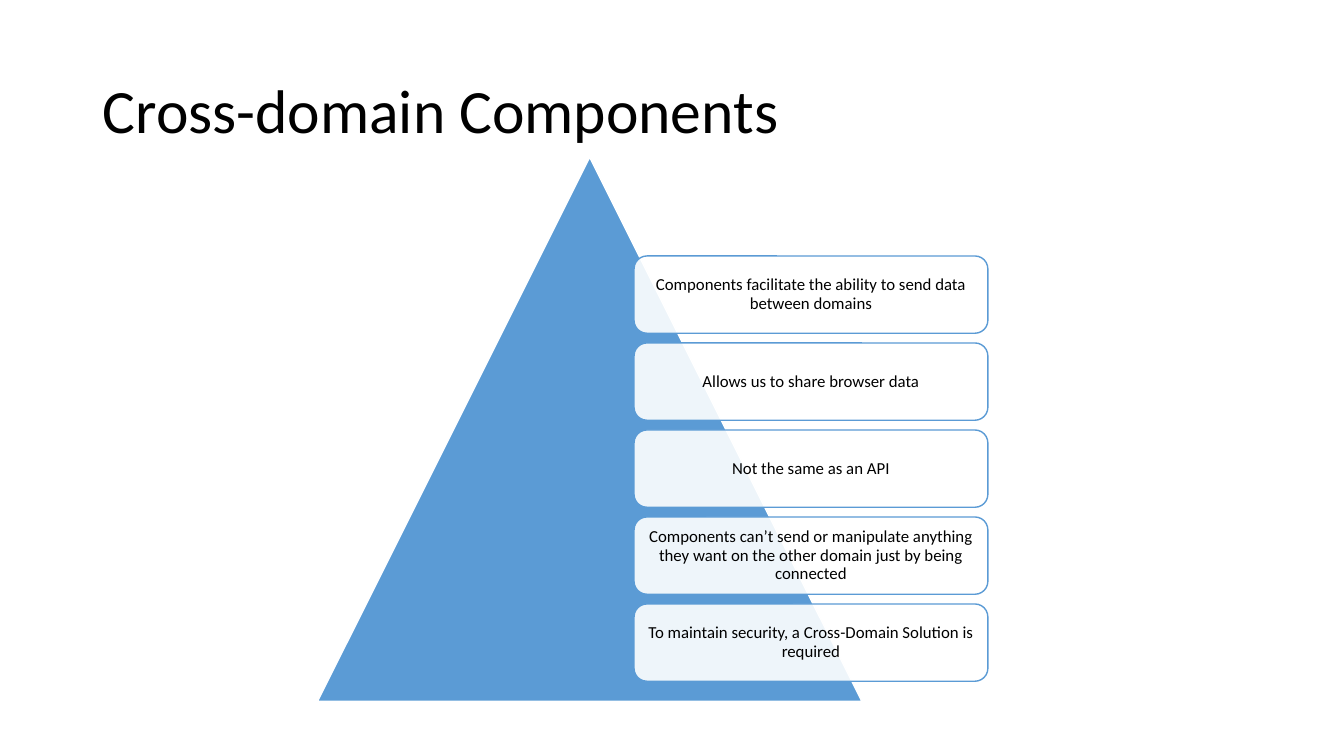
from lxml.etree import SubElement
from pptx import Presentation
from pptx.dml.color import RGBColor
from pptx.enum.shapes import MSO_SHAPE as SHAPE
from pptx.enum.text import MSO_ANCHOR as ANCHOR, PP_ALIGN as ALIGN
from pptx.oxml.ns import qn
from pptx.util import Inches, Pt


def rgb(code):
    return RGBColor.from_string(code)


class Deck:
    """Style and current slide; lengths are cells of a 40-column square grid."""
    FONT, TEXT, BLUE, WHITE = "Calibri", "000000", "5B9BD5", "FFFFFF"
    COLUMNS = 40

    def __init__(self, prs):
        self.cell = prs.slide_width / self.COLUMNS
        self.s = prs.slides.add_slide(prs.slide_layouts[6])

    def grid(self, *cells):
        return [round(c * self.cell) for c in cells]

    def label(self, sp, text, size, align):
        tf = sp.text_frame
        tf.word_wrap = True
        tf.vertical_anchor = ANCHOR.MIDDLE
        tf.text = text
        p = tf.paragraphs[0]
        p.alignment, p.line_spacing = align, 0.9
        font = p.runs[0].font
        font.name, font.size = self.FONT, Pt(size)
        font.color.rgb = rgb(self.TEXT)

    def title(self, text, *at):
        sp = self.s.shapes.add_textbox(*self.grid(*at))
        self.label(sp, text, 44, ALIGN.LEFT)

    def shape(self, kind, fill, line, *at):
        sp = self.s.shapes.add_shape(kind, *self.grid(*at))
        sp.shadow.inherit = False
        sp.fill.solid()
        sp.fill.fore_color.rgb = rgb(fill)
        sp.line.color.rgb = rgb(line)
        sp.line.width = Pt(1)
        return sp

    def card(self, text, *at):
        sp = self.shape(SHAPE.ROUNDED_RECTANGLE, self.WHITE, self.BLUE, *at)
        colour = sp._element.spPr.find(qn("a:solidFill"))[0]
        SubElement(colour, qn("a:alpha"), val="90000")
        tf = sp.text_frame
        tf.margin_left = tf.margin_right = Inches(0.05)
        self.label(sp, text, 12, ALIGN.CENTER)


COMPONENT_FACTS = [
    "Components facilitate the ability to send data between domains",
    "Allows us to share browser data",
    "Not the same as an API",
    "Components can’t send or manipulate anything they want on the other "
    "domain just by being connected",
    "To maintain security, a Cross-Domain Solution is required",
]


def main():
    prs = Presentation()
    prs.slide_width, prs.slide_height = Inches(13.33), Inches(7.5)
    deck = Deck(prs)

    # Title
    deck.title("Cross-domain Components", 2.76, 1.2, 34.5, 4.35)

    # Pyramid
    deck.shape(SHAPE.ISOSCELES_TRIANGLE, deck.BLUE, deck.WHITE,
               9.45, 4.68, 16.2, 16.2)

    # Cards stacked over the right side of the pyramid
    top, pitch = 7.62, 2.59
    for i, fact in enumerate(COMPONENT_FACTS):
        deck.card(fact, 18.87, top + i * pitch, 10.53, 2.3)

    prs.save("out.pptx")


if __name__ == "__main__":
    main()
